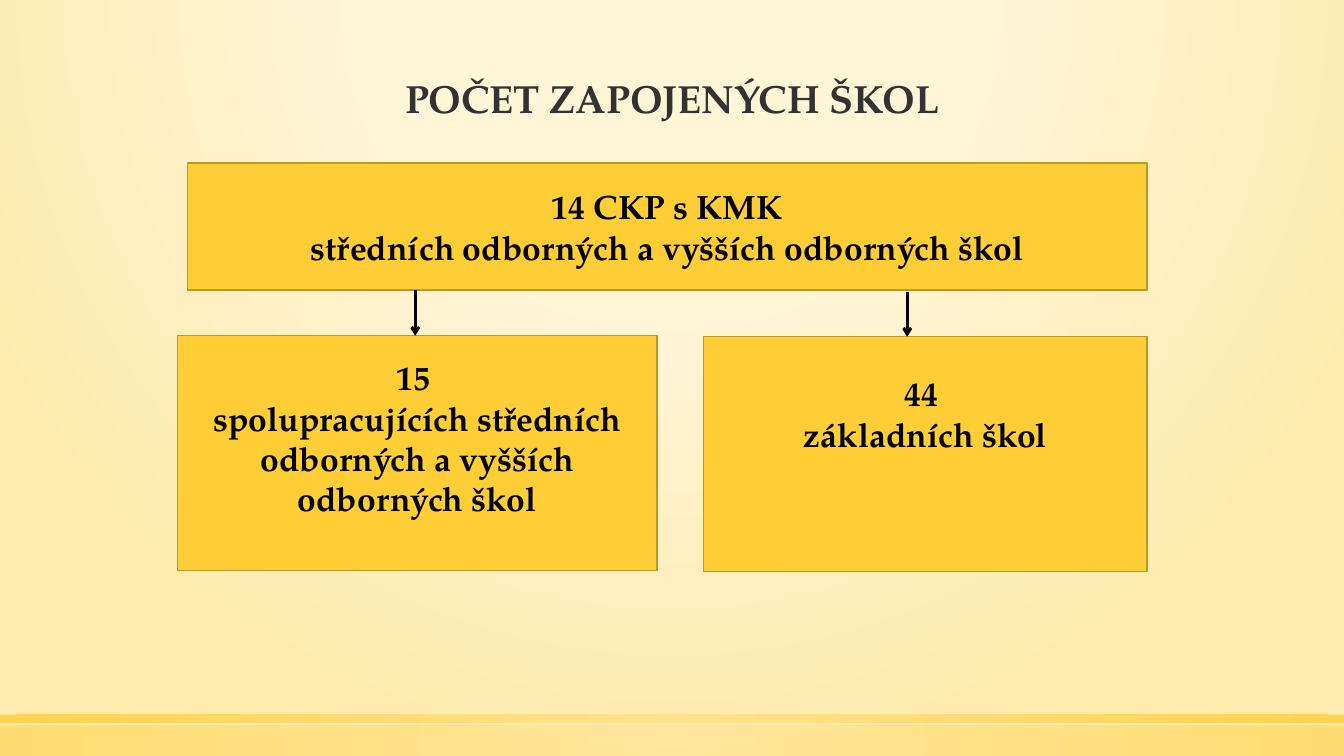
"""Build a slide showing the number of schools involved."""
from lxml.etree import SubElement
from pptx import Presentation
from pptx.dml.color import RGBColor
from pptx.enum.shapes import MSO_CONNECTOR, MSO_SHAPE
from pptx.enum.text import MSO_ANCHOR, PP_ALIGN
from pptx.oxml.ns import qn
from pptx.util import Pt

FONT = "TeX Gyre Pagella"
BLACK = RGBColor(0, 0, 0)
CHARCOAL = RGBColor(0x32, 0x32, 0x32)
CREAM = RGBColor(0xFF, 0xF5, 0xD7)
SAND = RGBColor(0xFF, 0xEB, 0xAF)
LIGHT_GOLD = RGBColor(0xFF, 0xE1, 0x86)
GOLD = RGBColor(0xFF, 0xCD, 0x36)
DARK_GOLD = RGBColor(0xBD, 0x98, 0x28)


def set_gradient(obj, fill, stops, top, bottom):
    fill.gradient()
    grad = obj.element.find(".//" + qn("a:gradFill"))
    for child in list(grad):
        grad.remove(child)
    gs_lst = SubElement(grad, qn("a:gsLst"))
    for pos, color, alpha in stops:
        gs = SubElement(gs_lst, qn("a:gs"), pos=str(pos * 1000))
        clr = SubElement(gs, qn("a:srgbClr"), val=str(color))
        if alpha < 100:
            SubElement(clr, qn("a:alpha"), val=str(alpha * 1000))
    path_el = SubElement(grad, qn("a:path"), {"path": "circle"})
    SubElement(path_el, qn("a:fillToRect"), l="50000", t=str(top * 1000),
               r="50000", b=str(bottom * 1000))


def write(tf, lines, size, color, spacing=None):
    tf.word_wrap = True
    for i, line in enumerate(lines):
        p = tf.paragraphs[0] if i == 0 else tf.add_paragraph()
        p.alignment = PP_ALIGN.CENTER
        p.line_spacing = spacing
        r = p.add_run()
        r.text = line
        for name, value in {"name": FONT, "size": Pt(size), "bold": True}.items():
            setattr(r.font, name, value)
        r.font.color.rgb = color


prs = Presentation()
prs.slide_width, prs.slide_height = Pt(960), Pt(540)
s = prs.slides.add_slide(prs.slide_layouts[5])
set_gradient(s, s.background.fill,
             [(0, CREAM, 59), (40, CREAM, 66), (100, SAND, 100)], -80, 180)

for top, height, alpha in [(518.4, 21.6, 50), (510.5, 5.8, 80)]:
    band = s.shapes.add_shape(MSO_SHAPE.RECTANGLE, 0, Pt(top), Pt(960), Pt(height))
    band.shadow.inherit = False
    band.line.fill.background()
    set_gradient(band, band.fill, [(0, LIGHT_GOLD, alpha), (100, GOLD, alpha)], 50, 50)

title = s.shapes.title
for name, value in {"left": 105.8, "top": 36.7, "width": 748.8, "height": 54}.items():
    setattr(title, name, Pt(value))
title.text_frame.vertical_anchor = MSO_ANCHOR.BOTTOM
write(title.text_frame, ["POČET ZAPOJENÝCH ŠKOL"], 28, CHARCOAL, 0.9)

boxes = [
    (133.9, 116.6, 685.4, 90.7, 3.6,
     ["14 CKP s KMK", "středních odborných a vyšších odborných škol"]),
    (126.7, 239.8, 342.7, 167.8, 25.3,
     ["15 ", "spolupracujících středních odborných a vyšších odborných škol"]),
    (502.6, 240.5, 316.8, 167.8, 61.4, ["44 ", "základních škol"]),
]
for left, top, width, height, inset, lines in boxes:
    sp = s.shapes.add_shape(MSO_SHAPE.RECTANGLE, Pt(left), Pt(top), Pt(width), Pt(height))
    sp.shadow.inherit = False
    sp.fill.solid()
    sp.fill.fore_color.rgb = GOLD
    sp.line.color.rgb = DARK_GOLD
    sp.line.width = Pt(1)
    tf = sp.text_frame
    tf.vertical_anchor = MSO_ANCHOR.MIDDLE
    tf.margin_bottom = Pt(inset)
    write(tf, lines, 24, BLACK)

for x, y1, y2 in [(296.6, 207.4, 239.8), (648, 208.8, 240.5)]:
    arrow = s.shapes.add_connector(MSO_CONNECTOR.STRAIGHT, Pt(x), Pt(y1), Pt(x), Pt(y2))
    arrow.line.color.rgb = BLACK
    arrow.line.width = Pt(2)
    SubElement(arrow.line._get_or_add_ln(), qn("a:tailEnd"), type="arrow")
    SubElement(arrow.element.spPr, qn("a:effectLst"))

prs.save("out.pptx")
